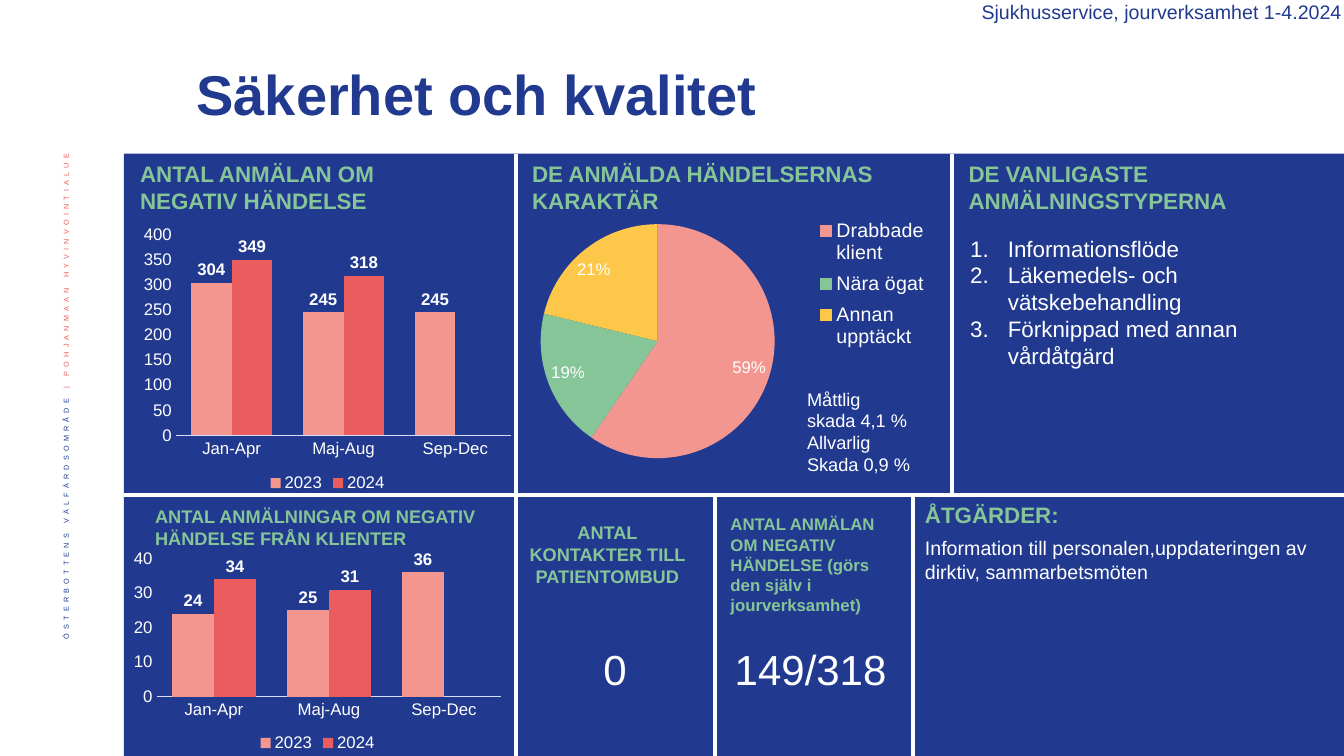
from lxml import etree
from pptx import Presentation
from pptx.chart.data import CategoryChartData
from pptx.dml.color import RGBColor
from pptx.enum import chart as ch, shapes, text
from pptx.oxml import ns
from pptx.util import Cm, Pt

COLORS = {
    "navy": "213A8F", "white": "FFFFFF", "green": "85C598", "salmon": "F39690",
    "red": "EB5C5F", "yellow": "FDC84A", "axis": "D6DDF6",
}
FONT = "Arial"
W, H = 33.87, 19.05
LEFT, TOP, MIDDLE = 3.12, 3.87, 12.47
PERIODS = ["Jan-Apr", "Maj-Aug", "Sep-Dec"]


def rgb(name):
    return RGBColor.from_string(COLORS[name])


def style(font, size, color, bold=False):
    font.name, font.size, font.bold = FONT, Pt(size), bold
    font.color.rgb = rgb(color)


def add_run(p, words, size, color, bold=False):
    r = p.add_run()
    r.text = words
    style(r.font, size, color, bold)
    return r


def add_text(s, box, lines, size, color, bold=False, align=text.PP_ALIGN.LEFT):
    tf = s.shapes.add_textbox(*map(Cm, box)).text_frame
    tf.word_wrap = True
    for i, line in enumerate(lines):
        p = tf.add_paragraph() if i else tf.paragraphs[0]
        p.alignment = align
        add_run(p, line, size, color, bold)
    return tf


def add_heading(s, box, words, size=16, align=text.PP_ALIGN.LEFT):
    add_text(s, box, [words], size, "green", True, align)


def add_figure(s, left, words):
    add_text(s, (left, 16.1, 5, 1.55), [words], 30, "white", align=text.PP_ALIGN.CENTER)


def number_paragraphs(tf):
    for p in tf.paragraphs:
        pPr = p._p.get_or_add_pPr()
        pPr.set("marL", str(Cm(0.95)))
        pPr.set("indent", str(-Cm(0.95)))
        etree.SubElement(pPr, ns.qn("a:buAutoNum"), type="arabicPeriod")


def add_side_text(s):
    tf = s.shapes.add_textbox(Cm(1.07), Cm(3.47), Cm(1.32), Cm(14.55)).text_frame
    tf.word_wrap = True
    tf.vertical_anchor = text.MSO_ANCHOR.MIDDLE
    tf._txBody.bodyPr.set("vert", "vert270")
    p = tf.paragraphs[0]
    p.alignment, p.line_spacing = text.PP_ALIGN.RIGHT, 0.9
    for words, color in (("ÖSTERBOTTENS VÄLFÄRDSOMRÅDE ", "navy"),
                         ("| POHJANMAAN HYVINVOINTIALUE ", "red")):
        rPr = add_run(p, words, 9, color)._r.get_or_add_rPr()
        rPr.set("baseline", "30000")
        rPr.set("spc", "300")


def add_panels(s):
    """Draw the blue field and the white lines that divide it."""
    sp = s.shapes.add_shape(shapes.MSO_SHAPE.RECTANGLE, Cm(LEFT), Cm(TOP),
                            Cm(W - LEFT), Cm(H - TOP))
    sp.shadow.inherit = False
    sp.fill.solid()
    sp.fill.fore_color.rgb = rgb("navy")
    sp.line.fill.background()
    for ends in ((LEFT, MIDDLE, W, MIDDLE), (13, TOP, 13, H), (24, TOP, 24, MIDDLE),
                 (18.01, MIDDLE, 18.01, H), (23.01, MIDDLE, 23.01, H)):
        line = s.shapes.add_connector(shapes.MSO_CONNECTOR.STRAIGHT, *map(Cm, ends))
        line.line.color.rgb = rgb("white")
        line.line.width = Pt(3)
        etree.SubElement(line._element.spPr, ns.qn("a:effectLst"))


def add_chart(s, kind, box, categories, series, legend_pos, legend_size):
    data = CategoryChartData()
    data.categories = categories
    for name, values in series:
        data.add_series(name, values)
    chart = s.shapes.add_chart(kind, *map(Cm, box), data).chart
    chart.has_title = False
    style(chart.font, 10, "navy")
    chart.has_legend = True
    chart.legend.position = legend_pos
    chart.legend.include_in_layout = False
    style(chart.legend.font, legend_size, "white")
    return chart


def add_columns(s, box, values_2023, values_2024, top, step):
    chart = add_chart(s, ch.XL_CHART_TYPE.COLUMN_CLUSTERED, box, PERIODS,
                      [("2023", values_2023), ("2024", values_2024)],
                      ch.XL_LEGEND_POSITION.BOTTOM, 12)
    for axis in (chart.category_axis, chart.value_axis):
        axis.has_major_gridlines = False
        axis.major_tick_mark = axis.minor_tick_mark = ch.XL_TICK_MARK.NONE
        style(axis.tick_labels.font, 12, "white")
    chart.category_axis.format.line.color.rgb = rgb("axis")
    chart.category_axis.format.line.width = Pt(0.75)
    values = chart.value_axis
    values.format.line.fill.background()
    values.minimum_scale, values.maximum_scale, values.major_unit = 0, top, step
    plot = chart.plots[0]
    plot.gap_width, plot.vary_by_categories = 75, False
    for series, color in zip(plot.series, ("salmon", "red")):
        series.format.fill.solid()
        series.format.fill.fore_color.rgb = rgb(color)
        labels = series.data_labels
        labels.show_value = True
        labels.position = ch.XL_LABEL_POSITION.OUTSIDE_END
        style(labels.font, 12, "white", True)


def place_part(part, index, **settings):
    """Fix a chart part, in fractions of the chart; index is the layout's place in it."""
    for old in part.findall(ns.qn("c:layout")):
        part.remove(old)
    layout = etree.Element(ns.qn("c:layout"))
    part.insert(index, layout)
    manual = etree.SubElement(layout, ns.qn("c:manualLayout"))
    for tag, val in settings.items():
        etree.SubElement(manual, ns.qn("c:" + tag), val=str(val))


def add_pie(s, box):
    chart = add_chart(s, ch.XL_CHART_TYPE.PIE, box,
                      ["Drabbade klient", "Nära ögat", "Annan upptäckt"],
                      [("Andel", (59, 19, 21))], ch.XL_LEGEND_POSITION.RIGHT, 14)
    place_part(chart._chartSpace.chart.plotArea, 0, layoutTarget="inner",
               xMode="edge", yMode="edge", x=0.05, y=0.08, w=0.54, h=0.83)
    place_part(chart.legend._element, 1, xMode="edge", yMode="edge",
               x=0.67, y=0.04, w=0.29, h=0.51)
    plot = chart.plots[0]
    plot.vary_by_categories = True
    for i, color in enumerate(("salmon", "green", "yellow")):
        fill = plot.series[0].points[i].format.fill
        fill.solid()
        fill.fore_color.rgb = rgb(color)
    labels = plot.series[0].data_labels
    labels.show_value = True
    labels.number_format, labels.number_format_is_linked = '0"%"', False
    labels.position = ch.XL_LABEL_POSITION.BEST_FIT
    style(labels.font, 12, "white")


def add_title(s, words):
    sp = s.shapes.title
    sp.left, sp.top, sp.width, sp.height = map(Cm, (4.7, 1.2, 25.35, 2.5))
    tf = sp.text_frame
    tf.auto_size = text.MSO_AUTO_SIZE.NONE
    tf.vertical_anchor = text.MSO_ANCHOR.MIDDLE
    p = tf.paragraphs[0]
    p.alignment, p.line_spacing = text.PP_ALIGN.LEFT, 0.9
    add_run(p, words, 40, "navy", True)


def main():
    prs = Presentation()
    prs.slide_width, prs.slide_height = Cm(W), Cm(H)
    s = prs.slides.add_slide(prs.slide_layouts[5])
    add_side_text(s)
    add_panels(s)
    add_title(s, "Säkerhet och kvalitet")
    tf = add_text(s, (18.95, 0, 14.92, 0.75), ["Sjukhusservice, jourverksamhet 1-4.2024"],
                  14, "navy", align=text.PP_ALIGN.RIGHT)
    tf.margin_top, tf.margin_right = 0, Cm(0.05)

    add_heading(s, (3.28, 3.91, 7.9, 1.63), "ANTAL ANMÄLAN OM NEGATIV HÄNDELSE")
    add_columns(s, (3.43, 5.54, 9.65, 6.96), (304, 245, 245), (349, 318, None), 400, 50)

    add_heading(s, (13.16, 3.91, 10.62, 1.63), "DE ANMÄLDA HÄNDELSERNAS KARAKTÄR")
    add_pie(s, (13.08, 5.03, 10.92, 7.21))
    add_text(s, (20.09, 9.65, 3.96, 2.64),
             ["Måttlig", "skada 4,1 %", "Allvarlig", "Skada 0,9 %"], 13, "white")

    add_heading(s, (24.16, 3.91, 9.07, 1.63), "DE VANLIGASTE ANMÄLNINGSTYPERNA")
    number_paragraphs(add_text(
        s, (24.2, 5.79, 9.65, 4.45),
        ["Informationsflöde", "Läkemedels- och vätskebehandling",
         "Förknippad med annan vårdåtgärd"], 16, "white"))

    add_heading(s, (3.66, 12.6, 9.3, 1.37),
                "ANTAL ANMÄLNINGAR OM NEGATIV HÄNDELSE FRÅN KLIENTER", 13)
    add_columns(s, (3.18, 13.74, 9.65, 5.31), (24, 25, 36), (34, 31, None), 40, 10)

    add_heading(s, (13.03, 13.02, 4.55, 1.97), "ANTAL KONTAKTER TILL PATIENTOMBUD",
                13, text.PP_ALIGN.CENTER)
    add_figure(s, 13, "0")
    add_heading(s, (18.16, 12.83, 4.72, 2.82),
                "ANTAL ANMÄLAN OM NEGATIV HÄNDELSE (görs den själv i jourverksamhet)", 12)
    add_figure(s, 17.93, "149/318")

    add_heading(s, (23.06, 12.5, 10.24, 0.94), "ÅTGÄRDER:")
    add_text(s, (23.06, 13.39, 10.8, 1.45),
             ["Information till personalen,uppdateringen av dirktiv, sammarbetsmöten"],
             14, "white")
    prs.save("out.pptx")


if __name__ == "__main__":
    main()
